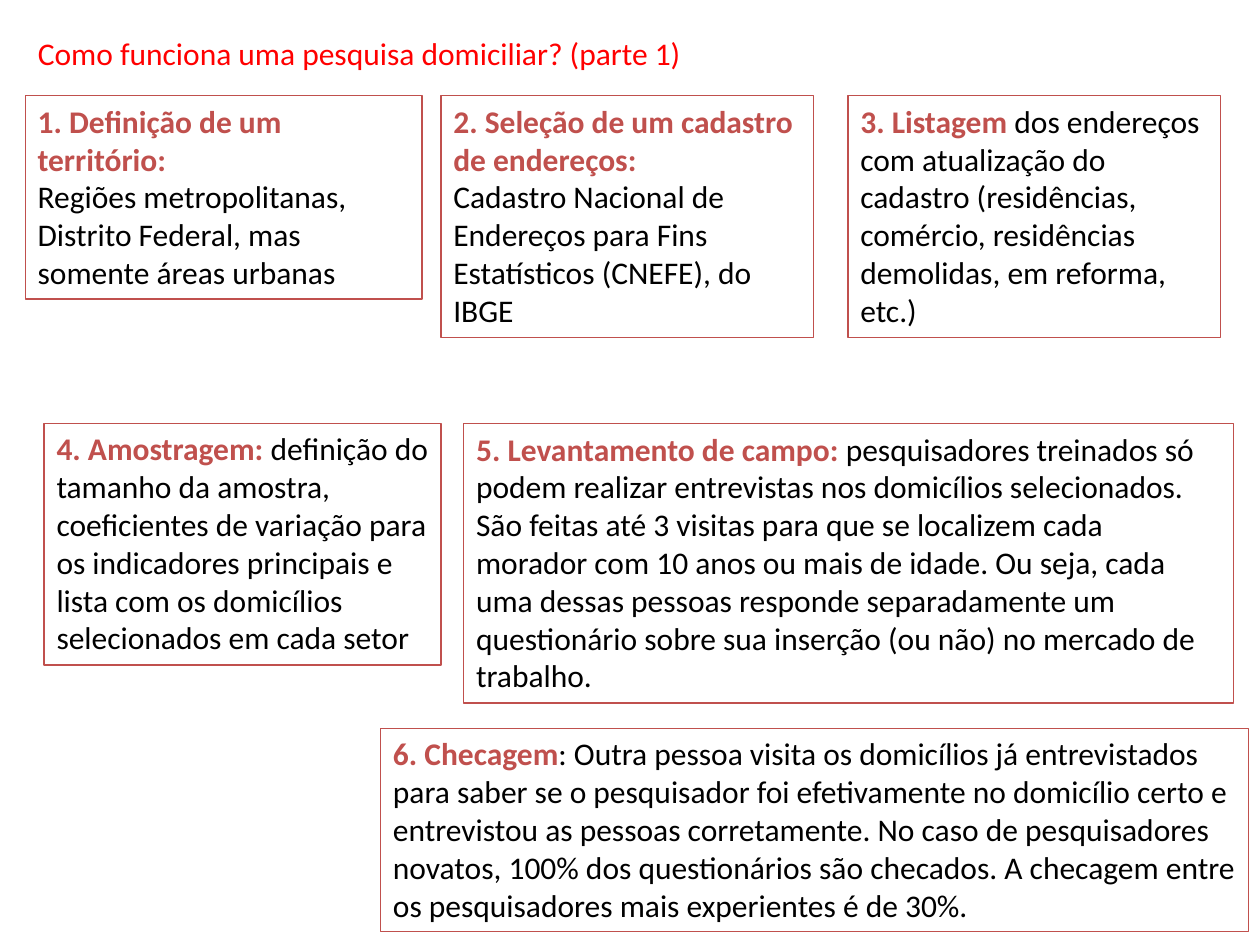
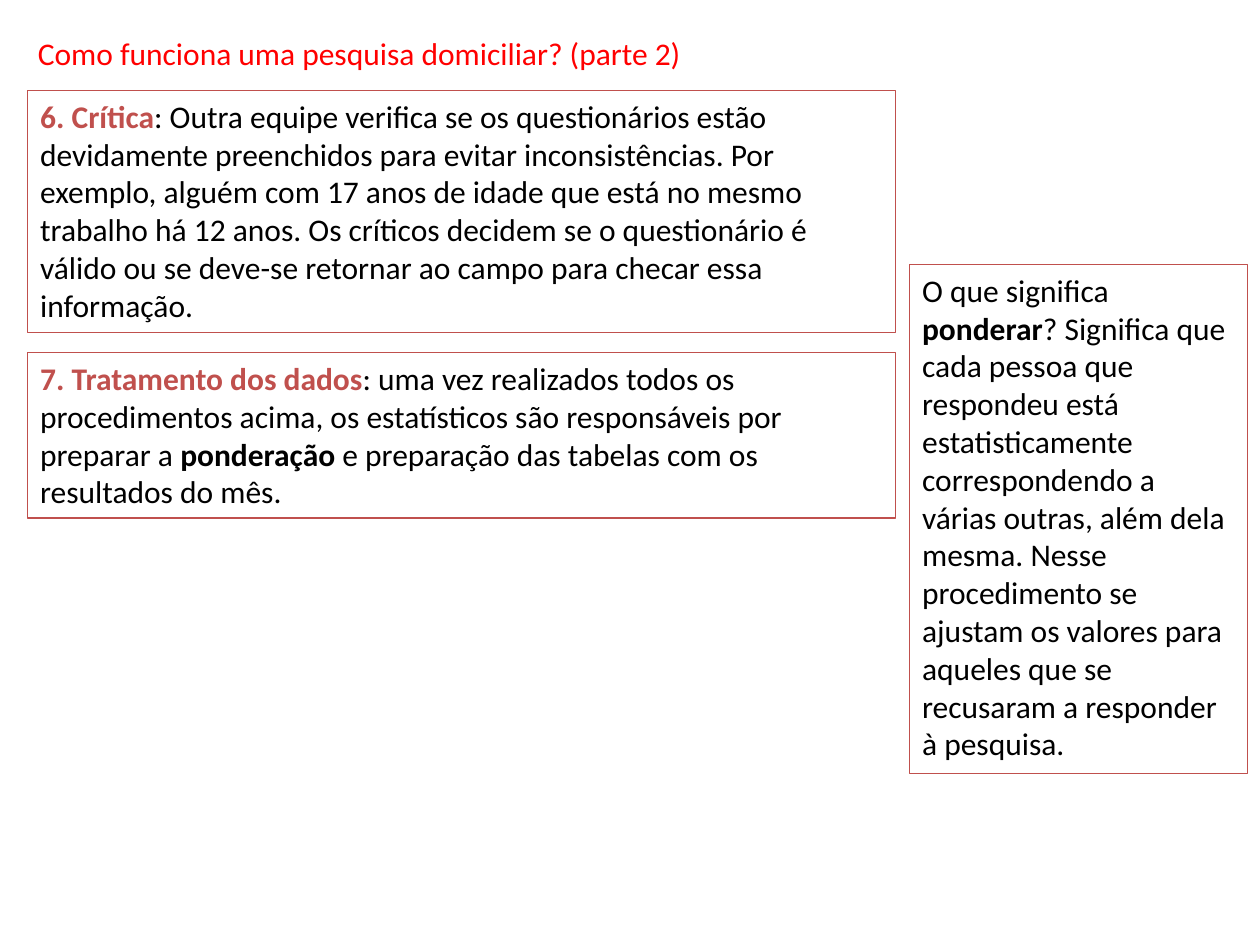
from dataclasses import dataclass

from pptx import Presentation
from pptx.dml.color import RGBColor
from pptx.enum.shapes import MSO_SHAPE
from pptx.enum.text import MSO_ANCHOR, MSO_AUTO_SIZE, PP_ALIGN
from pptx.slide import Slide
from pptx.text.text import TextFrame, _Run
from pptx.util import Inches, Pt


@dataclass(frozen=True)
class Theme:
    font: str = "Calibri"
    size: Pt = Pt(18)
    outline: Pt = Pt(0.75)
    title: RGBColor = RGBColor(0xFF, 0x00, 0x00)
    accent: RGBColor = RGBColor(0xC0, 0x50, 0x4D)
    body: RGBColor = RGBColor(0x00, 0x00, 0x00)


@dataclass(frozen=True)
class Span:
    text: str
    bold: bool = False
    accent: bool = False


@dataclass(frozen=True)
class Step:
    """A framed step: position and width in grid units, height in text lines."""
    column: float
    row: float
    columns: float
    lines: int
    paragraphs: list[list[Span]]


THEME = Theme()

# Grid of 100 columns by 75 rows
SLIDE_WIDTH, SLIDE_HEIGHT = Inches(10), Inches(7.5)
COLUMN, ROW = SLIDE_WIDTH / 100, SLIDE_HEIGHT / 75
LINE_ROWS, PADDING_ROWS = 3.03, 1
TOP_ROW, MIDDLE_ROW = 7.6, 33.6
SIDE, WIDE, TRIO = 31.5, 68.9, 29.6


def lead(text: str) -> Span:
    return Span(text, bold=True, accent=True)


SURVEY_PARTS: list[list[Step]] = [
    # Part 1: from territory to checking
    [
        Step(2, TOP_ROW, SIDE, 5, [
            [lead("1. Definição de um território:")],
            [Span("Regiões metropolitanas, Distrito Federal, mas somente áreas urbanas")],
        ]),
        Step(35, TOP_ROW, TRIO, 6, [
            [lead("2. Seleção de um cadastro de endereços:")],
            [Span("Cadastro Nacional de Endereços para Fins Estatísticos (CNEFE), do IBGE")],
        ]),
        Step(67.3, TOP_ROW, TRIO, 6, [[
            lead("3. Listagem"),
            Span(" dos endereços com atualização do cadastro (residências, comércio, "
                 "residências demolidas, em reforma, etc.)"),
        ]]),
        Step(3.5, MIDDLE_ROW, SIDE, 6, [[
            lead("4. Amostragem: "),
            Span("definição do tamanho da amostra, coeficientes de variação para os "
                 "indicadores principais e lista com os domicílios selecionados em cada setor"),
        ]]),
        Step(36.8, MIDDLE_ROW, 61.1, 7, [[
            lead("5. Levantamento de campo: "),
            Span("pesquisadores treinados só podem realizar entrevistas nos domicílios "
                 "selecionados. São feitas até 3 visitas para que se localizem cada morador "
                 "com 10 anos ou mais de idade. Ou seja, cada uma dessas pessoas responde "
                 "separadamente um questionário sobre sua inserção (ou não) no mercado de "
                 "trabalho."),
        ]]),
        Step(30.2, 57.8, WIDE, 5, [[
            lead("6. Checagem"),
            Span(": Outra pessoa visita os domicílios já entrevistados para saber se o "
                 "pesquisador foi efetivamente no domicílio certo e entrevistou as pessoas "
                 "corretamente. No caso de pesquisadores novatos, 100% dos questionários são "
                 "checados. A checagem entre os pesquisadores mais experientes é de 30%."),
        ]]),
    ],
    # Part 2: review, data treatment and weighting
    [
        Step(2.2, 7.2, WIDE, 6, [[
            lead("6. Crítica"),
            Span(": Outra equipe verifica se os questionários estão devidamente preenchidos "
                 "para evitar inconsistências. Por exemplo, alguém com 17 anos de idade que "
                 "está no mesmo trabalho há 12 anos. Os críticos decidem se o questionário é "
                 "válido ou se deve-se retornar ao campo para checar essa informação."),
        ]]),
        Step(2.2, 28, WIDE, 4, [[
            lead("7. Tratamento dos dados"),
            Span(": uma vez realizados todos os procedimentos acima, os estatísticos são "
                 "responsáveis por preparar a "),
            Span("ponderação", bold=True),
            Span(" e preparação das tabelas com os resultados do mês."),
        ]]),
        Step(72.2, 21, 26.8, 13, [[
            Span("O que significa "),
            Span("ponderar", bold=True),
            Span("? Significa que cada pessoa que respondeu está estatisticamente "
                 "correspondendo a várias outras, além dela mesma. Nesse procedimento se "
                 "ajustam os valores para aqueles que se recusaram a responder à pesquisa."),
        ]]),
    ],
]


def set_up_frame(frame: TextFrame) -> None:
    frame.word_wrap = True
    frame.auto_size = MSO_AUTO_SIZE.SHAPE_TO_FIT_TEXT
    frame.vertical_anchor = MSO_ANCHOR.TOP


def format_run(run: _Run, color: RGBColor, bold: bool = False) -> None:
    run.font.name = THEME.font
    run.font.size = THEME.size
    run.font.bold = bold
    run.font.color.rgb = color


def draw_title(slide: Slide, text: str) -> None:
    title = slide.shapes.title
    title.left, title.top = int(2 * COLUMN), int(2.2 * ROW)
    title.width, title.height = int(92.9 * COLUMN), int(4 * ROW)
    set_up_frame(title.text_frame)
    title.text_frame.text = text
    heading = title.text_frame.paragraphs[0]
    heading.alignment = PP_ALIGN.LEFT
    format_run(heading.runs[0], THEME.title)


def draw_step(slide: Slide, step: Step) -> None:
    height = PADDING_ROWS + step.lines * LINE_ROWS
    box = slide.shapes.add_shape(
        MSO_SHAPE.RECTANGLE, int(step.column * COLUMN), int(step.row * ROW),
        int(step.columns * COLUMN), int(height * ROW))
    box.shadow.inherit = False
    box.fill.background()
    box.line.color.rgb = THEME.accent
    box.line.width = THEME.outline

    frame = box.text_frame
    set_up_frame(frame)
    for index, spans in enumerate(step.paragraphs):
        paragraph = frame.add_paragraph() if index else frame.paragraphs[0]
        paragraph.alignment = PP_ALIGN.LEFT
        for span in spans:
            run = paragraph.add_run()
            run.text = span.text
            format_run(run, THEME.accent if span.accent else THEME.body, span.bold)


def main() -> None:
    deck = Presentation()
    deck.slide_width, deck.slide_height = SLIDE_WIDTH, SLIDE_HEIGHT
    title_only = deck.slide_layouts.get_by_name("Title Only")
    for number, steps in enumerate(SURVEY_PARTS, start=1):
        slide = deck.slides.add_slide(title_only)
        draw_title(slide, f"Como funciona uma pesquisa domiciliar? (parte {number})")
        for step in steps:
            draw_step(slide, step)
    deck.save("out.pptx")


if __name__ == "__main__":
    main()
